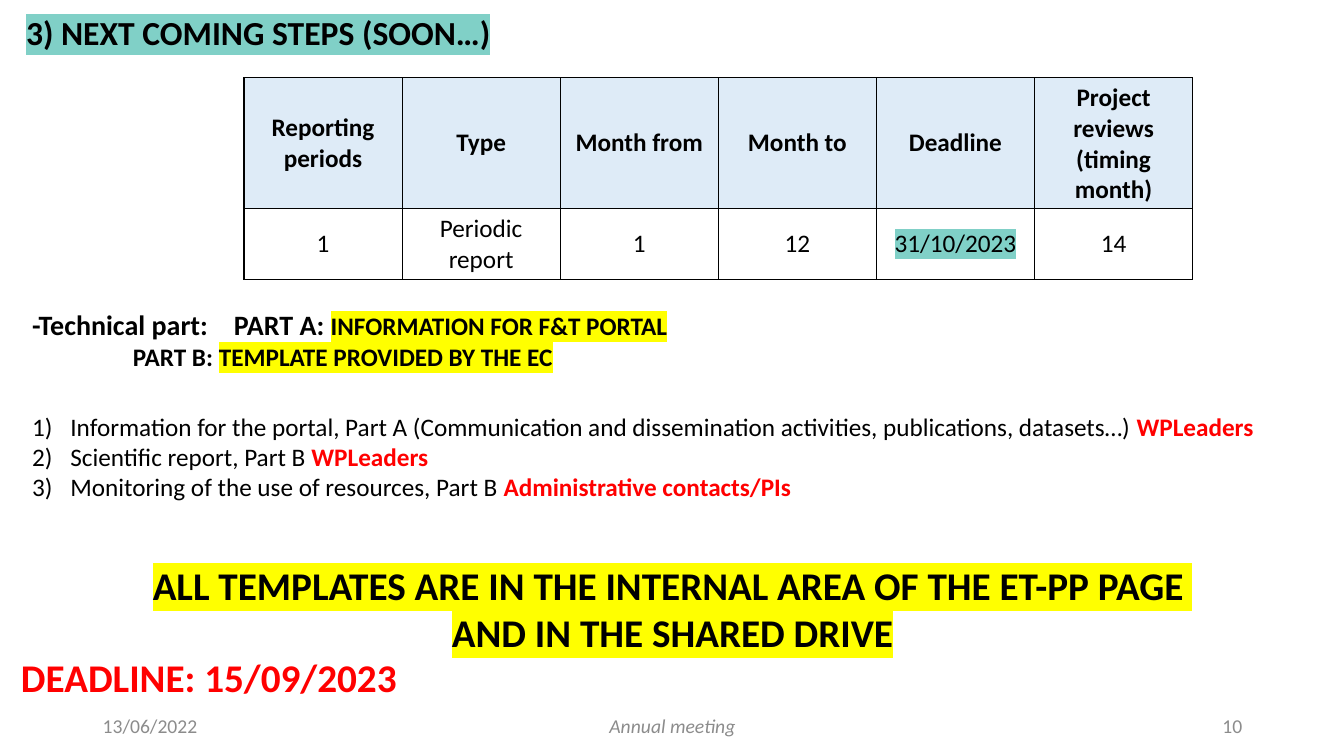
"""Build the slide on the next reporting steps."""
from lxml import etree
from pptx import Presentation
from pptx.dml.color import RGBColor
from pptx.enum.text import MSO_ANCHOR, MSO_AUTO_SIZE, PP_ALIGN
from pptx.oxml.ns import qn
from pptx.util import Inches, Pt

LEFT, MID, RIGHT = PP_ALIGN.LEFT, PP_ALIGN.CENTER, PP_ALIGN.RIGHT
CENTER = MSO_ANCHOR.MIDDLE
GROW = MSO_AUTO_SIZE.SHAPE_TO_FIT_TEXT
BLACK = RGBColor(0x00, 0x00, 0x00)
RED = RGBColor(0xFF, 0x00, 0x00)
GRAY = RGBColor(0x8C, 0x8C, 0x8C)
TEAL = RGBColor(0x80, 0xD0, 0xC7)
YELLOW = RGBColor(0xFF, 0xFF, 0x00)
PALE = RGBColor(0xDE, 0xEB, 0xF7)


def add_color(parent, tag, color):
    box = etree.SubElement(parent, qn(tag))
    etree.SubElement(box, qn("a:srgbClr"), val=str(color))


class Board:
    def __init__(self, slide, font="Calibri"):
        self.slide = slide
        self.font = font

    def line(self, para, runs, size, color=BLACK, bold=False, italic=False, align=LEFT):
        para.alignment = align
        font = para.font
        font.name, font.size = self.font, Pt(size)
        font.bold, font.italic = bold, italic
        font.color.rgb = color
        for text, style in runs:
            run = para.add_run()
            run.text = text
            if "size" in style:
                run.font.size = Pt(style["size"])
            if "bold" in style:
                run.font.bold = style["bold"]
            if "color" in style:
                run.font.color.rgb = style["color"]
            if "mark" in style:
                add_color(run.font._element, "a:highlight", style["mark"])

    def text(self, place, lines, size, wrap=False, count=False, **style):
        box = self.slide.shapes.add_textbox(*map(Inches, place))
        frame = box.text_frame
        frame.word_wrap = wrap
        if wrap:
            frame.vertical_anchor = CENTER
        else:
            frame.auto_size = GROW
        for i, runs in enumerate(lines):
            para = frame.add_paragraph() if i else frame.paragraphs[0]
            self.line(para, runs, size, **style)
            if count:
                self.number(para)

    def number(self, para):
        props = para._p.get_or_add_pPr()
        props.set("marL", str(Inches(0.38)))
        props.set("indent", str(Inches(-0.38)))
        props.insert(0, etree.Element(qn("a:buAutoNum"), type="arabicParenR"))

    def border(self, cell):
        props = cell._tc.get_or_add_tcPr()
        for side in ("L", "R", "T", "B"):
            edge = etree.SubElement(props, qn("a:ln" + side), w=str(Pt(1)))
            add_color(edge, "a:solidFill", BLACK)

    def table(self, place, rows, tall, size, marks):
        frame = self.slide.shapes.add_table(len(rows), len(rows[0]), *map(Inches, place))
        table = frame.table
        for r, row in enumerate(rows):
            table.rows[r].height = Inches(tall[r])
            for c, text in enumerate(row):
                cell = table.cell(r, c)
                cell.vertical_anchor = CENTER
                self.border(cell)
                if r:
                    cell.fill.background()
                else:
                    cell.fill.solid()
                    cell.fill.fore_color.rgb = PALE
                style = {"mark": TEAL} if text in marks else {}
                self.line(cell.text_frame.paragraphs[0], [(text, style)], size,
                          bold=r == 0, align=MID)


def main():
    deck = Presentation()
    deck.slide_width, deck.slide_height = Inches(13.33), Inches(7.5)
    board = Board(deck.slides.add_slide(deck.slide_layouts[6]))

    board.text((0.16, 0.07, 4.85, 0.5),
               [[("3) NEXT COMING STEPS (SOON…)", {"mark": TEAL})]], 24, bold=True)
    board.table((2.42, 0.77, 9.41, 2), [
        ["Reporting periods", "Type", "Month from", "Month to", "Deadline",
         "Project reviews (timing month)"],
        ["1", "Periodic report", "1", "12", "31/10/2023", "14"],
    ], (1.3, 0.7), 18, ["31/10/2023"])
    board.text((0.22, 3, 6.55, 0.74), [
        [("-Technical part: \tPART A: ", {"size": 20}),
         ("INFORMATION FOR F&T PORTAL", {"mark": YELLOW})],
        [("\t\tPART B: ", {}), ("TEMPLATE PROVIDED BY THE EC", {"mark": YELLOW})],
    ], 18, bold=True)

    tasks = [
        ("Information for the portal, Part A (Communication and dissemination "
         "activities, publications, datasets…) ", "WPLeaders"),
        ("Scientific report, Part B ", "WPLeaders"),
        ("Monitoring of the use of resources, Part B ", "Administrative contacts/PIs"),
    ]
    owner = {"color": RED, "bold": True}
    board.text((0.22, 4.03, 12.45, 1.01),
               [[(task, {}), (who, owner)] for task, who in tasks], 18, count=True)

    notice = ["ALL TEMPLATES ARE IN THE INTERNAL AREA OF THE ET-PP PAGE ",
              "AND IN THE SHARED DRIVE"]
    board.text((1.35, 5.52, 10.64, 1.04),
               [[(line, {"mark": YELLOW})] for line in notice], 28, bold=True, align=MID)
    board.text((0.11, 6.43, 3.98, 0.57), [[("DEADLINE: 15/09/2023", {})]], 28,
               color=RED, bold=True)

    for left, width, text, align in [(0.92, 3, "13/06/2022", LEFT),
                                     (4.42, 4.5, "Annual meeting", MID),
                                     (9.42, 3, "10", RIGHT)]:
        board.text((left, 7, width, 0.4), [[(text, {})]], 14, wrap=True,
                   color=GRAY, italic=align == MID, align=align)
    deck.save("out.pptx")


if __name__ == "__main__":
    main()
